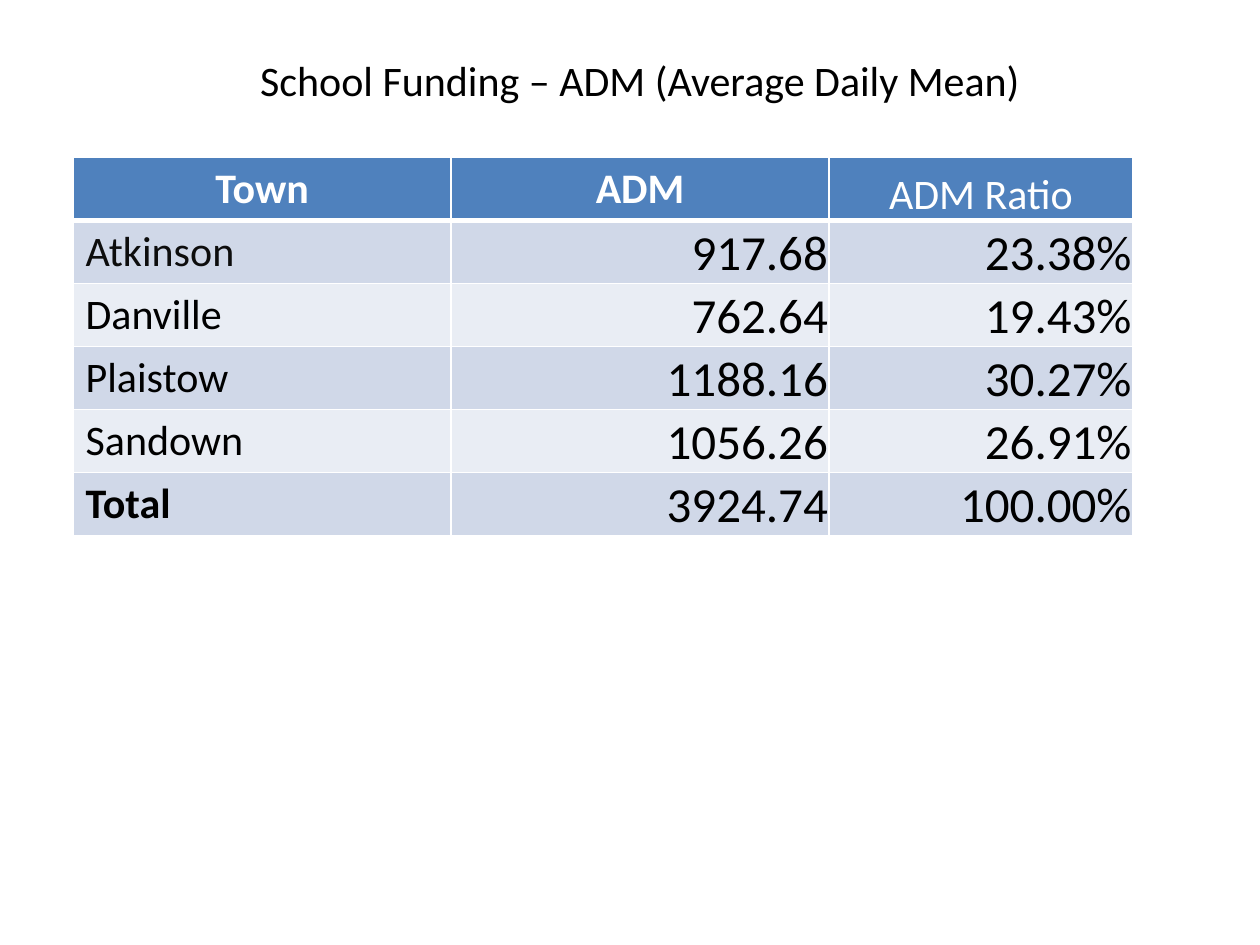
from dataclasses import dataclass

from lxml.etree import SubElement
from pptx import Presentation
from pptx.dml.color import RGBColor
from pptx.enum.text import MSO_ANCHOR, PP_ALIGN
from pptx.oxml.ns import qn
from pptx.table import _Cell
from pptx.text.text import TextFrame
from pptx.util import Inches, Pt

BLACK, WHITE = "000000", "FFFFFF"
HEADER_FILL = "4F81BD"
BAND_FILLS = ("D0D8E8", "E9EDF4")
COLUMN_WIDTHS = (3, 3, 2.41)
ROW_HEIGHT = 0.5


@dataclass
class TownRow:
    town: str
    adm: str
    ratio: str
    town_color: str = BLACK
    bold: bool = False


TOWN_ROWS = (
    TownRow("Atkinson", "917.68", "23.38%", town_color="0D0D0D"),
    TownRow("Danville", "762.64", "19.43%"),
    TownRow("Plaistow", "1188.16", "30.27%"),
    TownRow("Sandown", "1056.26", "26.91%"),
    TownRow("Total", "3924.74", "100.00%", bold=True),
)


def rgb(color: str) -> RGBColor:
    return RGBColor.from_string(color)


def write_text(frame: TextFrame, text: str, *, size: float = 24, color: str = BLACK,
               bold: bool = False, align: PP_ALIGN = PP_ALIGN.LEFT) -> None:
    para = frame.paragraphs[0]
    para.alignment = align
    span = para.add_run()
    span.text = text
    span.font.name = "Calibri"
    span.font.size = Pt(size)
    span.font.bold = bold
    span.font.color.rgb = rgb(color)


def add_borders(cell: _Cell, top: float, bottom: float) -> None:
    """Draw white cell borders; widths are in points, the sides are 1 point."""
    properties = cell._tc.get_or_add_tcPr()
    for side, width in (("L", 1), ("R", 1), ("T", top), ("B", bottom)):
        line = SubElement(properties, qn(f"a:ln{side}"), w=str(Pt(width)))
        fill = SubElement(line, qn("a:solidFill"))
        SubElement(fill, qn("a:srgbClr"), val=WHITE)


def style_cell(cell: _Cell, fill: str, *, top: float = 1, bottom: float = 1,
               tight: bool = False) -> None:
    """Fill and border a cell; a tight one sits at the bottom with thin margins."""
    add_borders(cell, top, bottom)
    cell.fill.solid()
    cell.fill.fore_color.rgb = rgb(fill)
    if tight:
        cell.vertical_anchor = MSO_ANCHOR.BOTTOM
        cell.margin_left = cell.margin_top = cell.margin_right = Inches(0.01)
        cell.margin_bottom = Inches(0)


def add_title(slide) -> None:
    box = slide.shapes.add_textbox(Inches(0.83), Inches(0.25), Inches(8.5), Inches(0.77))
    frame = box.text_frame
    frame.word_wrap = True
    frame.vertical_anchor = MSO_ANCHOR.MIDDLE
    write_text(frame, "School Funding – ADM (Average Daily Mean)", align=PP_ALIGN.CENTER)


def add_funding_table(slide) -> None:
    row_count = len(TOWN_ROWS) + 1
    table = slide.shapes.add_table(
        row_count, len(COLUMN_WIDTHS), Inches(0.58), Inches(1.25),
        Inches(sum(COLUMN_WIDTHS)), Inches(ROW_HEIGHT * row_count)).table
    for column, width in zip(table.columns, COLUMN_WIDTHS):
        column.width = Inches(width)

    for index, heading in enumerate(("Town", "ADM", "ADM Ratio")):
        is_ratio = index == 2
        cell = table.cell(0, index)
        style_cell(cell, HEADER_FILL, bottom=3, tight=is_ratio)
        write_text(cell.text_frame, heading, color=WHITE, bold=not is_ratio,
                   align=PP_ALIGN.CENTER)

    for index, row in enumerate(TOWN_ROWS):
        fill = BAND_FILLS[index % 2]
        top = 3 if index == 0 else 1
        town_cell = table.cell(index + 1, 0)
        style_cell(town_cell, fill, top=top)
        write_text(town_cell.text_frame, row.town, color=row.town_color, bold=row.bold)
        for column, value in enumerate((row.adm, row.ratio), start=1):
            cell = table.cell(index + 1, column)
            style_cell(cell, fill, top=top, tight=True)
            write_text(cell.text_frame, value, size=28, align=PP_ALIGN.RIGHT)


def main() -> None:
    deck = Presentation()
    deck.slide_width, deck.slide_height = Inches(10), Inches(7.5)
    page = deck.slides.add_slide(deck.slide_layouts[6])
    add_title(page)
    add_funding_table(page)
    deck.save("out.pptx")


if __name__ == "__main__":
    main()
